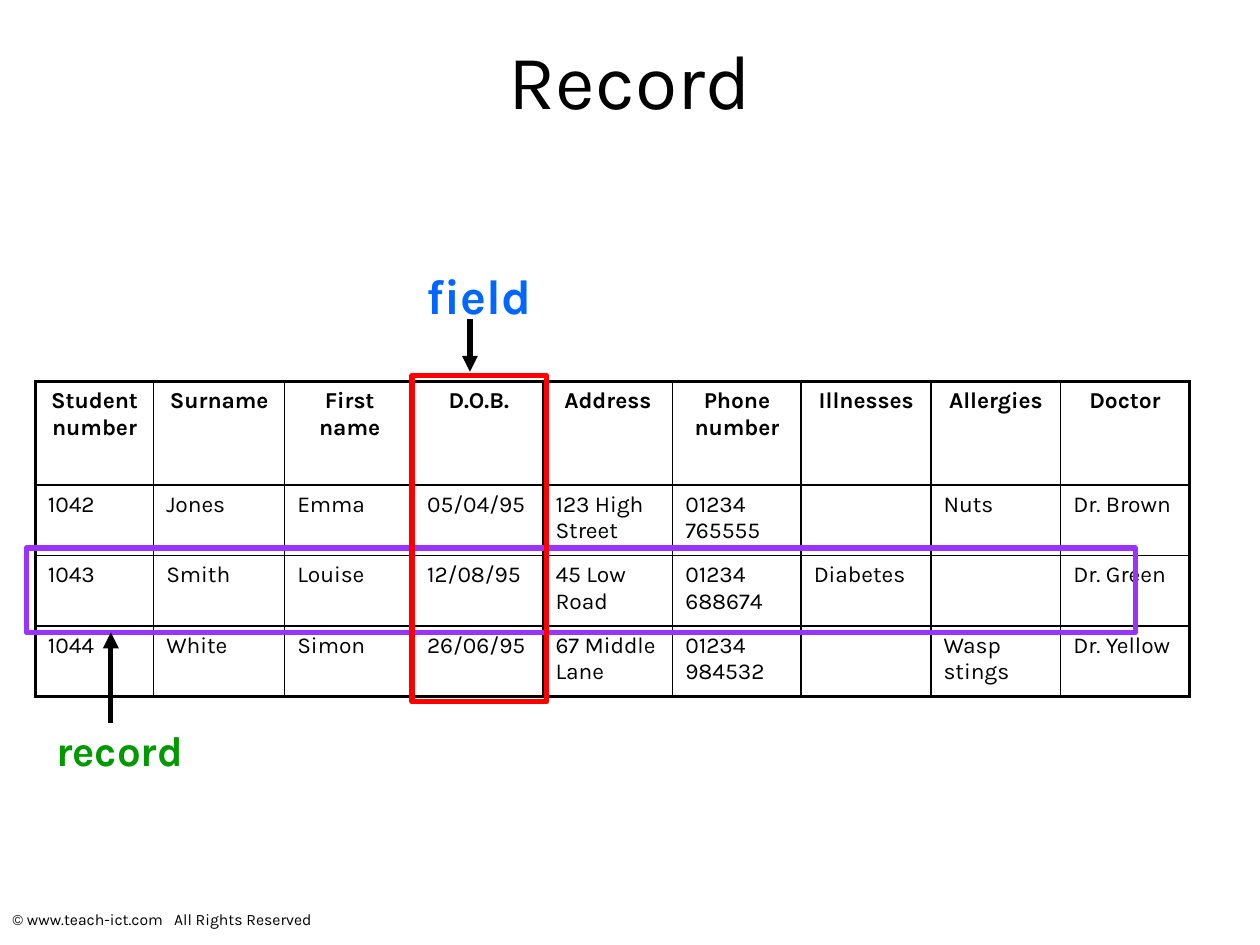
from dataclasses import dataclass

from lxml import etree
from pptx import Presentation
from pptx import util as u
from pptx.dml.color import RGBColor
from pptx.enum import shapes, text
from pptx.oxml import ns


@dataclass(frozen=True)
class Theme:
    font: str = "Karla"
    black: str = "000000"
    record: str = "009900"
    record_frame: str = "9933FF"
    field: str = "0066FF"
    field_frame: str = "FF0000"
    title_size: float = 44
    field_size: float = 28
    record_size: float = 24
    table_size: float = 13
    footer_size: float = 9
    thin: float = 1
    edge: float = 2.25
    marker: float = 3


THEME = Theme()
COLUMN_WIDTHS = [0.94, 1.04, 1.03, 1.02, 1.03, 1.02, 1.03, 1.03, 1.02]
ROW_HEIGHTS = [0.82, 0.56, 0.56, 0.56]
STUDENTS = [
    ["Student number", "Surname", "First name", "D.O.B.", "Address",
     "Phone number", "Illnesses", "Allergies", "Doctor"],
    ["1042", "Jones", "Emma", "05/04/95", "123 High Street",
     "01234 765555", "", "Nuts", "Dr. Brown"],
    ["1043", "Smith", "Louise", "12/08/95", "45 Low Road",
     "01234 688674", "Diabetes", "", "Dr. Green"],
    ["1044", "White", "Simon", "26/06/95", "67 Middle Lane",
     "01234 984532", "", "Wasp stings", "Dr. Yellow"],
]


def write(frame, words, *, size, color=THEME.black, bold=False, centered=False):
    paragraph = frame.paragraphs[0]
    paragraph.alignment = text.PP_ALIGN.CENTER if centered else text.PP_ALIGN.LEFT
    run = paragraph.add_run()
    run.text = words
    run.font.name = THEME.font
    run.font.size = u.Pt(size)
    run.font.bold = bold
    run.font.color.rgb = RGBColor.from_string(color)


def add_text(slide, box, words, *, anchor=text.MSO_ANCHOR.TOP, **style):
    frame = slide.shapes.add_textbox(*map(u.Inches, box)).text_frame
    frame.word_wrap = True
    frame.vertical_anchor = anchor
    write(frame, words, **style)


def set_borders(cell, widths):
    """Draw the cell's sides; widths are points in the order L, R, T, B."""
    properties = cell._tc.get_or_add_tcPr()
    for index, (side, width) in enumerate(zip("LRTB", widths)):
        line = etree.Element(ns.qn(f"a:ln{side}"), w=str(u.Pt(width)))
        fill = etree.SubElement(line, ns.qn("a:solidFill"))
        etree.SubElement(fill, ns.qn("a:srgbClr"), val=THEME.black)
        properties.insert(index, line)


def add_student_table(slide, left, top):
    last_row, last_column = len(ROW_HEIGHTS) - 1, len(COLUMN_WIDTHS) - 1
    table = slide.shapes.add_table(
        last_row + 1, last_column + 1, u.Inches(left), u.Inches(top),
        u.Inches(sum(COLUMN_WIDTHS)), u.Inches(sum(ROW_HEIGHTS))).table
    table.first_row = table.horz_banding = False
    for column, width in zip(table.columns, COLUMN_WIDTHS):
        column.width = u.Inches(width)
    for row, height in zip(table.rows, ROW_HEIGHTS):
        row.height = u.Inches(height)
    for r, student in enumerate(STUDENTS):
        for c, words in enumerate(student):
            cell = table.cell(r, c)
            cell.fill.background()
            on_edge = (c == 0, c == last_column, r == 0, r == last_row)
            set_borders(cell, [THEME.edge if edge else THEME.thin for edge in on_edge])
            if words:
                write(cell.text_frame, words, size=THEME.table_size,
                      bold=r == 0, centered=r == 0)


def add_frame(slide, box, color):
    shape = slide.shapes.add_shape(shapes.MSO_SHAPE.RECTANGLE, *map(u.Inches, box))
    shape.shadow.inherit = False
    shape.fill.background()
    shape.line.color.rgb = RGBColor.from_string(color)
    shape.line.width = u.Pt(THEME.marker)


def add_arrow(slide, x, start_y, end_y):
    arrow = slide.shapes.add_connector(
        shapes.MSO_CONNECTOR.STRAIGHT,
        u.Inches(x), u.Inches(start_y), u.Inches(x), u.Inches(end_y))
    arrow.line.color.rgb = RGBColor.from_string(THEME.black)
    arrow.line.width = u.Pt(THEME.marker)
    etree.SubElement(arrow.line._get_or_add_ln(), ns.qn("a:tailEnd"), type="triangle")
    etree.SubElement(arrow._element.spPr, ns.qn("a:effectLst"))


def main():
    presentation = Presentation()
    presentation.slide_width = u.Inches(10)
    presentation.slide_height = u.Inches(7.5)
    slide = presentation.slides.add_slide(presentation.slide_layouts[6])

    add_text(slide, (0, 7.17, 3.6, 0.25), "© www.teach-ict.com   All Rights Reserved",
             size=THEME.footer_size)
    add_text(slide, (0, 0, 10, 1.25), "Record", size=THEME.title_size,
             centered=True, anchor=text.MSO_ANCHOR.MIDDLE)
    add_student_table(slide, 0.28, 3.03)

    add_frame(slide, (0.21, 4.35, 8.8, 0.67), THEME.record_frame)
    add_text(slide, (0.22, 5.7, 1.46, 0.5), "record", size=THEME.record_size,
             color=THEME.record, bold=True, centered=True)
    add_frame(slide, (3.27, 2.98, 1.07, 2.59), THEME.field_frame)
    add_text(slide, (3.07, 2.06, 1.46, 0.57), "field", size=THEME.field_size,
             color=THEME.field, bold=True, centered=True)
    add_arrow(slide, 0.88, 5.74, 5.02)
    add_arrow(slide, 3.73, 2.53, 2.95)

    presentation.save("out.pptx")


if __name__ == "__main__":
    main()
